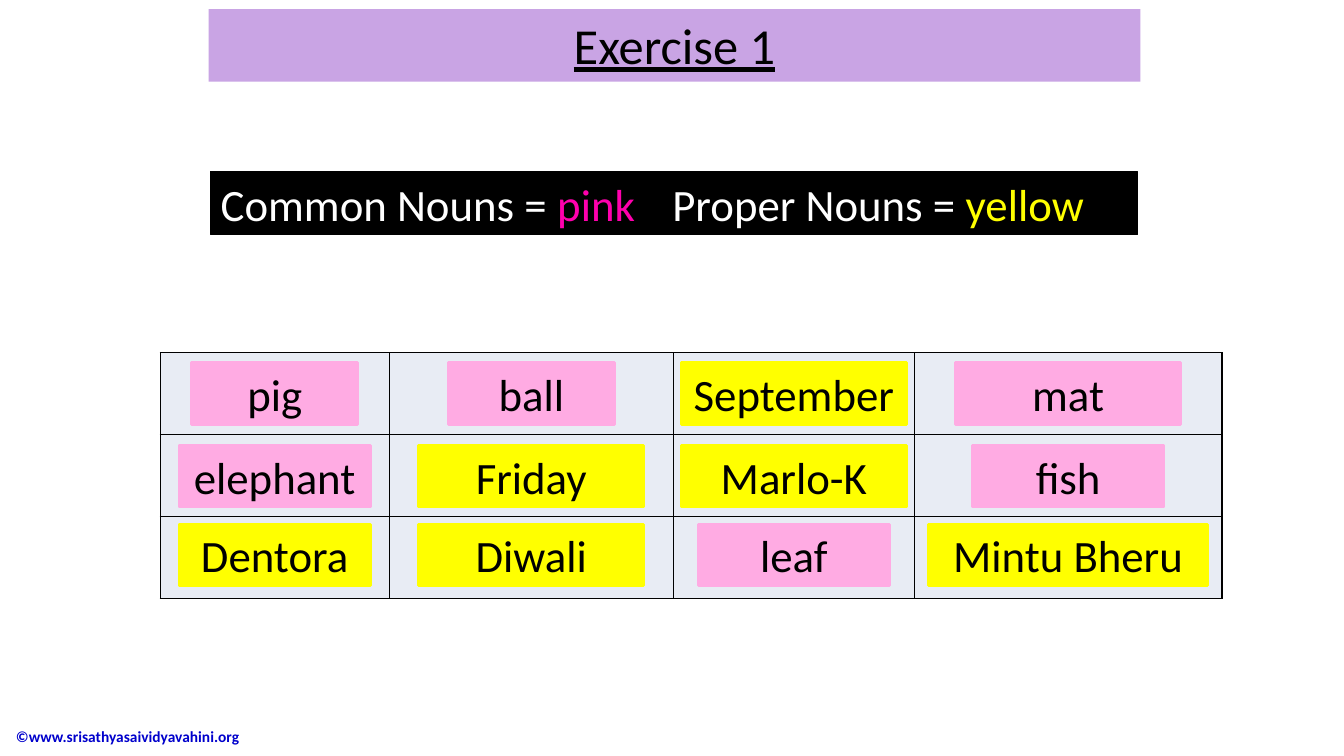
from lxml.etree import SubElement
from pptx import Presentation
from pptx.dml.color import RGBColor
from pptx.enum.shapes import MSO_SHAPE
from pptx.enum.text import MSO_ANCHOR, PP_ALIGN
from pptx.oxml.ns import qn
from pptx.util import Inches, Pt

BLACK = RGBColor(0, 0, 0)
WHITE = RGBColor(255, 255, 255)
LILAC = RGBColor(0xC9, 0xA4, 0xE4)
MAGENTA = RGBColor(0xFF, 0x00, 0xAD)
PINK = RGBColor(0xFF, 0xAB, 0xE3)
YELLOW = RGBColor(0xFF, 0xFF, 0x00)
PALE = RGBColor(0xE8, 0xEC, 0xF4)
BLUE = RGBColor(0, 0, 0xCC)

COLS = (2.27, 2.82, 2.39, 3.05)
TOPS = (0.1, 0.92, 1.7)
WORDS = (
    (("pig", PINK, 1.65), ("ball", PINK, 1.65),
     ("September", YELLOW, 2.23), ("mat", PINK, 2.23)),
    (("elephant", PINK, 1.9), ("Friday", YELLOW, 2.23),
     ("Marlo-K", YELLOW, 2.23), ("fish", PINK, 1.9)),
    (("Dentora", YELLOW, 1.9), ("Diwali", YELLOW, 2.23),
     ("leaf", PINK, 1.9), ("Mintu Bheru", YELLOW, 2.77)),
)


def style(para, size, color=BLACK):
    para.font.name = "Calibri"
    para.font.size = Pt(size)
    para.font.color.rgb = color


def add_box(slide, left, top, width, height, color, line):
    box = slide.shapes.add_shape(
        MSO_SHAPE.RECTANGLE, Inches(left), Inches(top), Inches(width), Inches(height))
    box.shadow.inherit = False
    box.fill.solid()
    box.fill.fore_color.rgb = color
    box.line.color.rgb = color
    box.line.width = Pt(line)
    return box


def add_title(slide, left, top, width, height):
    title = slide.shapes.title
    title.left, title.top = Inches(left), Inches(top)
    title.width, title.height = Inches(width), Inches(height)
    title.fill.solid()
    title.fill.fore_color.rgb = LILAC
    frame = title.text_frame
    frame.text = "Exercise 1"
    frame.vertical_anchor = MSO_ANCHOR.TOP
    para = frame.paragraphs[0]
    para.alignment = PP_ALIGN.CENTER
    style(para, 36)
    para.font.underline = True


def add_key(slide, left, top, width, height):
    frame = add_box(slide, left, top, width, height, BLACK, 0.75).text_frame
    frame.vertical_anchor = MSO_ANCHOR.TOP
    para = frame.paragraphs[0]
    para.alignment = PP_ALIGN.LEFT
    tabs = SubElement(para._p.get_or_add_pPr(), qn("a:tabLst"))
    SubElement(tabs, qn("a:tab"), pos=str(Inches(4.48)), algn="l")
    style(para, 32, WHITE)
    for text, color in (("Common Nouns = ", WHITE), ("pink", MAGENTA),
                        ("\tProper Nouns = ", WHITE), ("yellow", YELLOW)):
        run = para.add_run()
        run.text = text
        run.font.color.rgb = color


def style_cell(cell):
    props = cell._tc.get_or_add_tcPr()
    for side in ("lnL", "lnR", "lnT", "lnB"):
        edge = SubElement(props, qn("a:" + side), w=str(Pt(1)))
        fill = SubElement(edge, qn("a:solidFill"))
        SubElement(fill, qn("a:srgbClr"), val=str(BLACK))
    cell.fill.solid()
    cell.fill.fore_color.rgb = PALE


def add_grid(slide, left, top, width, height):
    table = slide.shapes.add_table(
        len(WORDS), len(COLS), Inches(left), Inches(top),
        Inches(width), Inches(height)).table
    for col, size in zip(table.columns, COLS):
        col.width = Inches(size)
    for cell in table.iter_cells():
        style_cell(cell)
    for row, drop in zip(WORDS, TOPS):
        for num, (word, color, wide) in enumerate(row):
            mid = left + sum(COLS[:num]) + COLS[num] / 2
            chip = add_box(slide, mid - wide / 2, top + drop, wide, 0.61, color, 2)
            frame = chip.text_frame
            frame.word_wrap = False
            frame.vertical_anchor = MSO_ANCHOR.MIDDLE
            frame.text = word
            frame.paragraphs[0].alignment = PP_ALIGN.CENTER
            style(frame.paragraphs[0], 32)


def add_credit(slide, left, top, width, height):
    frame = slide.shapes.add_textbox(
        Inches(left), Inches(top), Inches(width), Inches(height)).text_frame
    frame.word_wrap = True
    frame.vertical_anchor = MSO_ANCHOR.MIDDLE
    frame.text = "©www.srisathyasaividyavahini.org"
    style(frame.paragraphs[0], 11, BLUE)
    frame.paragraphs[0].font.bold = True


def main():
    deck = Presentation()
    deck.slide_width, deck.slide_height = Inches(13.33), Inches(7.5)
    slide = deck.slides.add_slide(deck.slide_layouts[5])
    add_credit(slide, 0.06, 7.1, 3.53, 0.41)
    add_title(slide, 2.07, 0.09, 9.24, 0.72)
    add_key(slide, 2.09, 1.7, 9.19, 0.63)
    add_grid(slide, 1.59, 3.5, sum(COLS), 2.44)
    deck.save("out.pptx")


if __name__ == "__main__":
    main()
